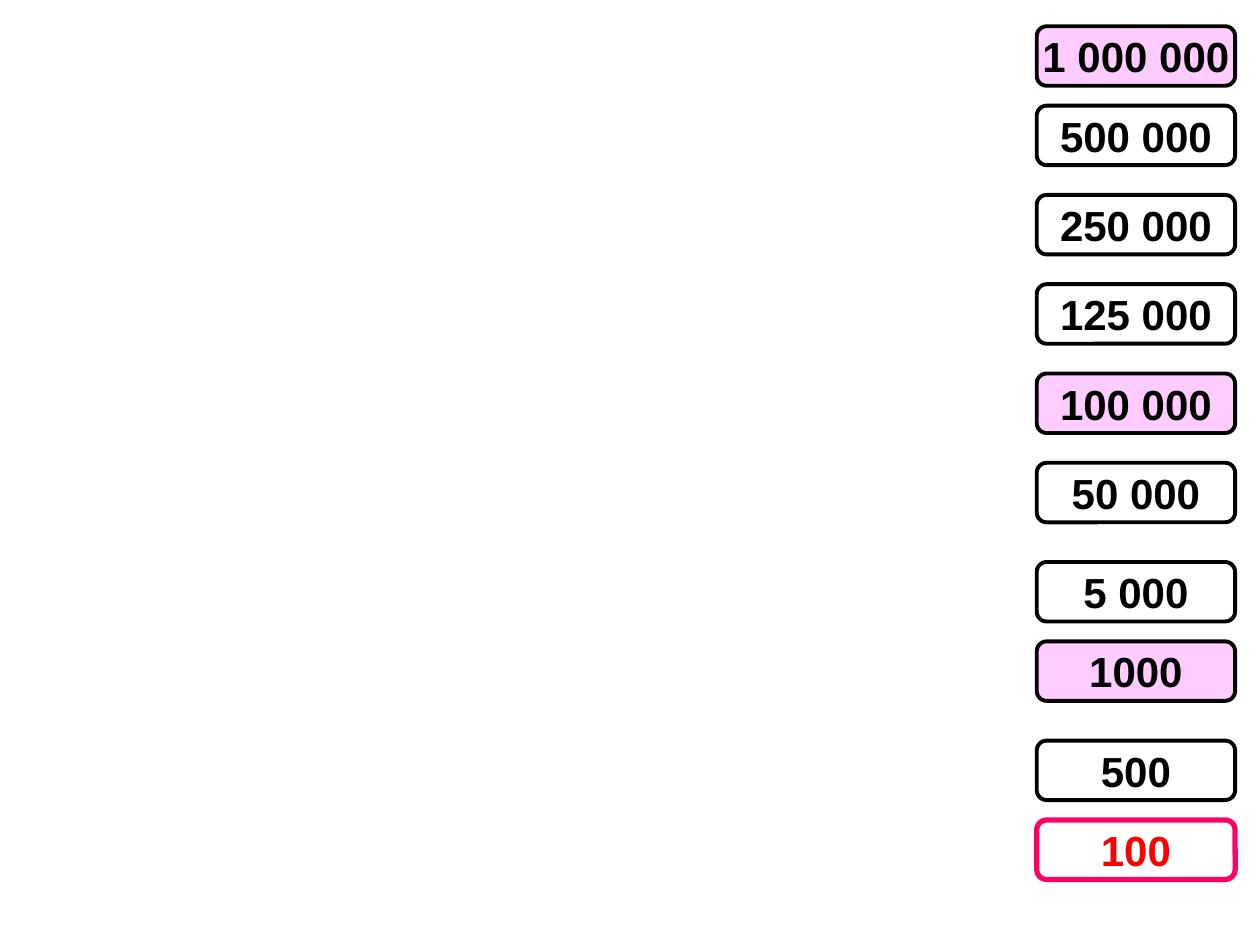
from pptx import Presentation
from pptx.dml.color import RGBColor
from pptx.enum.shapes import MSO_SHAPE as Shape
from pptx.enum.text import MSO_ANCHOR as Anchor, PP_ALIGN as Align
from pptx.util import Cm, Pt

COLORS = {
    "black": "000000",
    "white": "FFFFFF",
    "pink": "FFCCFF",
    "magenta": "FF0066",
    "red": "FF0000",
}

# Prize ladder, in centimetres
LEFT, TOP = 20.9, 0.53
WIDTH, HEIGHT = 4, 1.2


def color(name):
    return RGBColor.from_string(COLORS[name])


def write(shape, text, size=24, bold=True, font_color="black", font_name="Arial"):
    frame = shape.text_frame
    frame.word_wrap = False
    frame.vertical_anchor = Anchor.MIDDLE
    paragraph = frame.paragraphs[0]
    paragraph.alignment = Align.CENTER
    run = paragraph.add_run()
    run.text = text
    run.font.name = font_name
    run.font.size = Pt(size)
    run.font.bold = bold
    run.font.color.rgb = color(font_color)


presentation = Presentation()
presentation.slide_width = Cm(25.4)
presentation.slide_height = Cm(19.05)
slide = presentation.slides.add_slide(presentation.slide_layouts[6])

# Each prize with the gap below it; safe sums are pink, the current one is red
prizes = [
    ("1 000 000", 0.4),
    ("500 000", 0.6),
    ("250 000", 0.6),
    ("125 000", 0.6),
    ("100 000", 0.6),
    ("50 000", 0.8),
    ("5 000", 0.4),
    ("1000", 0.8),
    ("500", 0.4),
    ("100", 0),
]
safe_sums = {"1 000 000", "100 000", "1000"}
current_sum = "100"

# Boxes from top to bottom
top = TOP
for prize, gap in prizes:
    is_current = prize == current_sum
    box = slide.shapes.add_shape(
        Shape.ROUNDED_RECTANGLE, Cm(LEFT), Cm(top), Cm(WIDTH), Cm(HEIGHT)
    )
    box.shadow.inherit = False
    box.fill.solid()
    box.fill.fore_color.rgb = color("pink" if prize in safe_sums else "white")
    box.line.color.rgb = color("magenta" if is_current else "black")
    box.line.width = Pt(3 if is_current else 2.25)
    write(box, prize, font_color="red" if is_current else "black")
    top += HEIGHT + gap

presentation.save("out.pptx")
